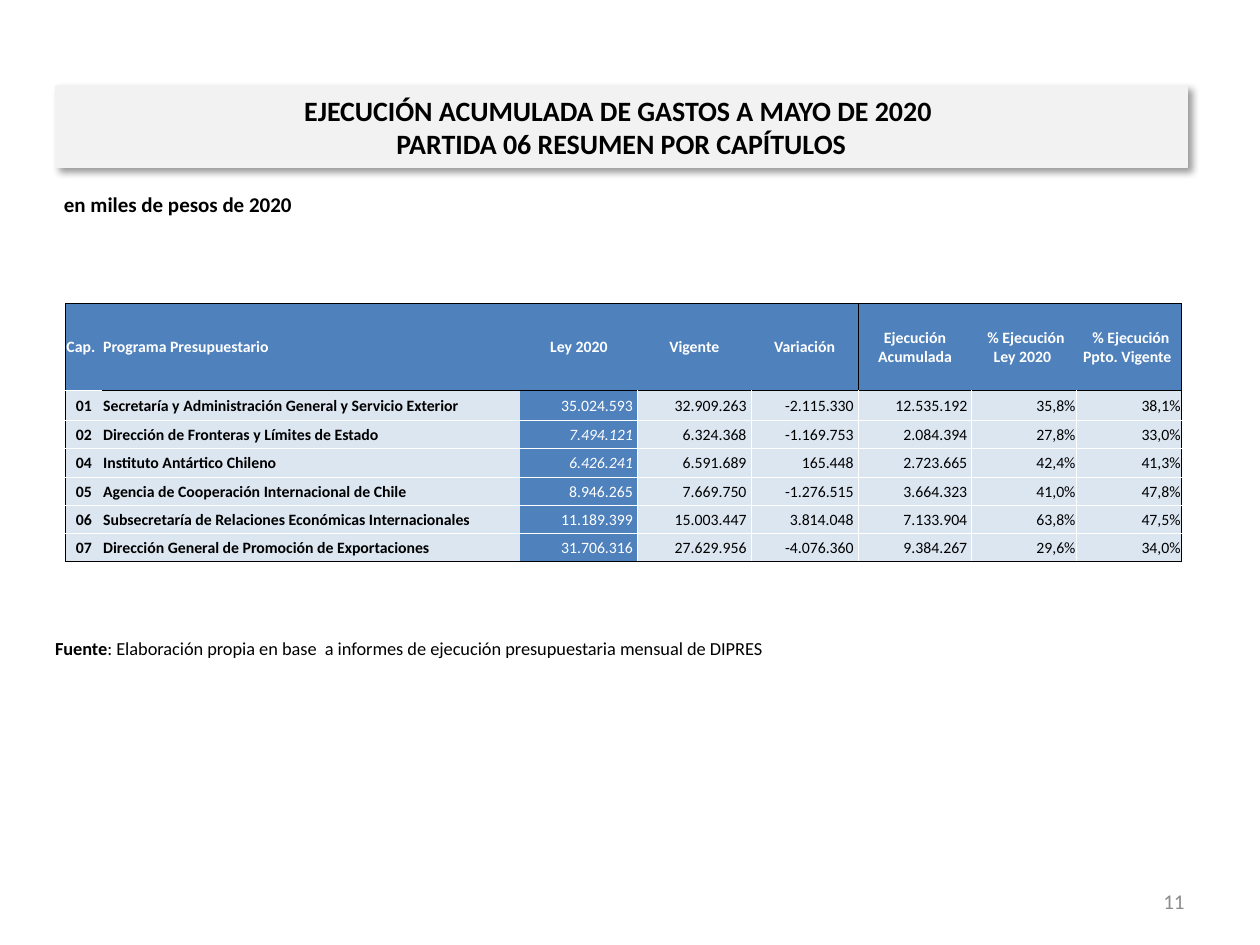
from lxml.etree import SubElement
from pptx import Presentation
from pptx.dml.color import RGBColor
from pptx.enum.shapes import MSO_SHAPE as Shape
from pptx.enum.text import MSO_ANCHOR as Anchor, PP_ALIGN as Align
from pptx.oxml.ns import qn
from pptx.util import Cm, Pt

BLACK, WHITE, BLUE, PALE = "000000", "FFFFFF", "4F81BD", "DCE6F1"


def write_text(frame, text, size=9, color=BLACK, bold=False, italic=False,
               align=Align.LEFT, anchor=Anchor.TOP):
    frame.word_wrap = True
    frame.vertical_anchor = anchor
    paragraph = frame.paragraphs[0]
    paragraph.alignment = align
    for number, line in enumerate(text.split("\n")):
        if number:
            paragraph.add_line_break()
        run = paragraph.add_run()
        run.text = line
        run.font.name = "Calibri"
        run.font.size = Pt(size)
        run.font.bold = bold
        run.font.italic = italic
        run.font.color.rgb = RGBColor.from_string(color)


def set_border(cell, side, color):
    line = SubElement(cell._tc.get_or_add_tcPr(), qn(f"a:ln{side}"), w=str(Pt(0.5)))
    if color:
        fill = SubElement(line, qn("a:solidFill"))
        SubElement(fill, qn("a:srgbClr"), val=color)
    else:
        SubElement(line, qn("a:noFill"))


presentation = Presentation()
presentation.slide_width = Cm(25.4)
presentation.slide_height = Cm(19.05)
slide = presentation.slides.add_slide(presentation.slide_layouts[6])

page_number = slide.shapes.add_textbox(Cm(18.21), Cm(17.65), Cm(5.92), Cm(1.02))
write_text(page_number.text_frame, "11", size=12, color="8C8C8C",
           align=Align.RIGHT, anchor=Anchor.MIDDLE)

source_note = slide.shapes.add_textbox(Cm(0.86), Cm(12.73), Cm(23.34), Cm(1.02))
write_text(source_note.text_frame, "Fuente", size=10.5, bold=True)
write_text(source_note.text_frame,
           ": Elaboración propia en base  a informes de ejecución presupuestaria mensual de DIPRES",
           size=10.5)

units = slide.shapes.add_textbox(Cm(1.04), Cm(3.73), Cm(22.86), Cm(1.27))
write_text(units.text_frame, "en miles de pesos de 2020", size=12, bold=True)

title = slide.shapes.add_shape(Shape.RECTANGLE, Cm(1.12), Cm(1.73), Cm(22.81), Cm(1.65))
title.fill.solid()
title.fill.fore_color.rgb = RGBColor.from_string("F2F2F2")
title.line.color.rgb = RGBColor.from_string("F2F2F2")
title.line.width = Pt(0.75)
title.shadow.inherit = False
effects = title._element.spPr.find(qn("a:effectLst"))
shadow = SubElement(effects, qn("a:outerShdw"), blurRad=str(Pt(4)), dist=str(Pt(3)),
                    dir="2700000", algn="tl", rotWithShape="0")
shadow_color = SubElement(shadow, qn("a:srgbClr"), val=BLACK)
SubElement(shadow_color, qn("a:alpha"), val="40000")
write_text(title.text_frame,
           "EJECUCIÓN ACUMULADA DE GASTOS A MAYO DE 2020 \nPARTIDA 06 RESUMEN POR CAPÍTULOS",
           size=16, bold=True, align=Align.CENTER, anchor=Anchor.MIDDLE)

rows = [
    ["Cap.", "Programa Presupuestario", "Ley 2020", "Vigente", "Variación",
     "Ejecución Acumulada", " % Ejecución Ley 2020 ", " % Ejecución Ppto. Vigente "],
    ["01", "Secretaría y Administración General y Servicio Exterior",
     "35.024.593 ", "32.909.263 ", "-2.115.330 ", "12.535.192 ", "35,8%", "38,1%"],
    ["02", "Dirección de Fronteras y Límites de Estado",
     "7.494.121 ", "6.324.368 ", "-1.169.753 ", "2.084.394 ", "27,8%", "33,0%"],
    ["04", "Instituto Antártico Chileno",
     "6.426.241 ", "6.591.689 ", "165.448 ", "2.723.665 ", "42,4%", "41,3%"],
    ["05", "Agencia de Cooperación Internacional de Chile",
     "8.946.265 ", "7.669.750 ", "-1.276.515 ", "3.664.323 ", "41,0%", "47,8%"],
    ["06", "Subsecretaría de Relaciones Económicas Internacionales",
     "11.189.399 ", "15.003.447 ", "3.814.048 ", "7.133.904 ", "63,8%", "47,5%"],
    ["07", "Dirección General de Promoción de Exportaciones",
     "31.706.316 ", "27.629.956 ", "-4.076.360 ", "9.384.267 ", "29,6%", "34,0%"],
]
column_widths = [0.74, 8.43, 2.36, 2.29, 2.16, 2.29, 2.11, 2.12]
row_heights = [1.75, 0.61] + [0.57] * 5
header_edges = {0: BLACK, 5: BLACK, 8: BLACK}
body_edges = {0: BLACK, 3: WHITE, 4: WHITE, 5: WHITE, 6: WHITE, 7: WHITE, 8: BLACK}

table = slide.shapes.add_table(len(rows), len(column_widths), Cm(1.32), Cm(6.12),
                               Cm(sum(column_widths)), Cm(sum(row_heights))).table
table.horz_banding = False
for column, width in zip(table.columns, column_widths):
    column.width = Cm(width)
for table_row, height in zip(table.rows, row_heights):
    table_row.height = Cm(height)

for row, values in enumerate(rows):
    is_header = row == 0
    edges = header_edges if is_header else body_edges
    for column, text in enumerate(values):
        cell = table.cell(row, column)
        cell.margin_left = cell.margin_right = cell.margin_top = Cm(0.02)
        cell.margin_bottom = 0
        cell.vertical_anchor = Anchor.MIDDLE

        black_rows = {0, len(rows)} if column == 0 else {0, 1, len(rows)}
        set_border(cell, "L", edges.get(column))
        set_border(cell, "R", edges.get(column + 1))
        set_border(cell, "T", BLACK if row in black_rows else WHITE)
        set_border(cell, "B", BLACK if row + 1 in black_rows else WHITE)

        is_blue = is_header or column == 2
        cell.fill.solid()
        cell.fill.fore_color.rgb = RGBColor.from_string(BLUE if is_blue else PALE)

        if column == 1 or (is_header and column == 0):
            align = Align.LEFT
        elif is_header or column == 0:
            align = Align.CENTER
        else:
            align = Align.RIGHT
        write_text(cell.text_frame, text, color=WHITE if is_blue else BLACK,
                   bold=is_header or column < 2, italic=column == 2 and row in (2, 3),
                   align=align, anchor=Anchor.MIDDLE)

presentation.save("out.pptx")
